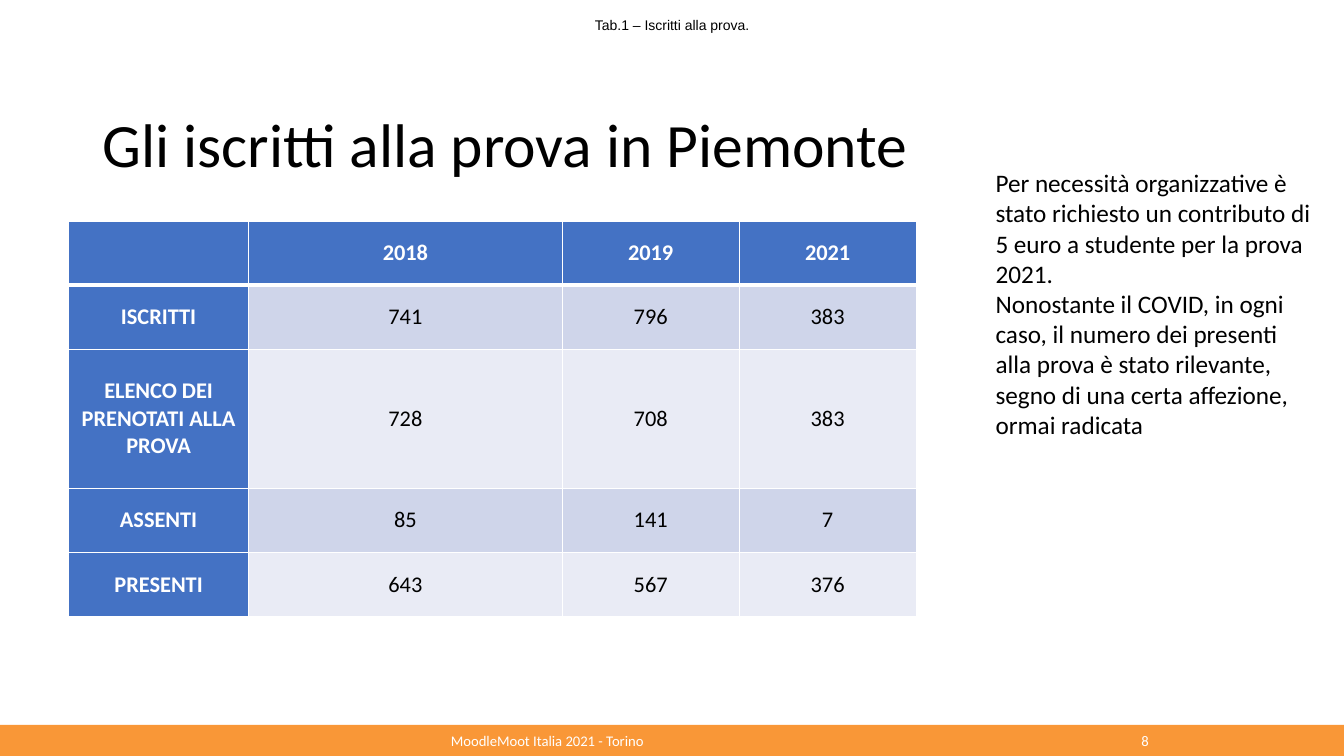
from pptx import Presentation
from pptx import util as u
from pptx.dml.color import RGBColor
from pptx.enum import shapes, text
from pptx.oxml import parse_xml
from pptx.oxml.ns import nsdecls

Pt = u.Pt
BLACK = RGBColor(0x00, 0x00, 0x00)
WHITE = RGBColor(0xFF, 0xFF, 0xFF)
ORANGE = RGBColor(0xF9, 0x97, 0x37)
BLUE = RGBColor(0x44, 0x72, 0xC4)
BANDS = [RGBColor(0xE9, 0xEB, 0xF5), RGBColor(0xCF, 0xD5, 0xEA)]
MID = text.MSO_ANCHOR.MIDDLE
LEFT = text.PP_ALIGN.LEFT
CENTER = text.PP_ALIGN.CENTER


def write(frame, words, size=16, font="Calibri", color=BLACK, bold=False,
          align=LEFT, anchor=MID, space=1.0):
    frame.word_wrap = True
    frame.vertical_anchor = anchor
    frame.text = words
    for para in frame.paragraphs:
        para.alignment = align
        para.line_spacing = space
        para.font.size = Pt(size)
        para.font.name = font
        para.font.bold = bold
        para.font.color.rgb = color


deck = Presentation()
deck.slide_width, deck.slide_height = Pt(960), Pt(540)
slide = deck.slides.add_slide(deck.slide_layouts[5])
items = slide.shapes

bar = items.add_shape(shapes.MSO_SHAPE.RECTANGLE, Pt(0), Pt(517.7), Pt(960), Pt(22.3))
bar.shadow.inherit = False
bar.fill.solid()
bar.fill.fore_color.rgb = ORANGE
bar.line.fill.background()

for words, left, width in [("MoodleMoot Italia 2021 - Torino", 301, 180), ("8", 798, 40)]:
    foot = items.add_textbox(Pt(left), Pt(517.7), Pt(width), Pt(22.3))
    write(foot.text_frame, words, size=10.5, color=WHITE, align=CENTER)

title = items.title
title.left, title.top, title.width, title.height = Pt(66), Pt(53), Pt(828), Pt(104.4)
write(title.text_frame, "Gli iscritti alla prova in Piemonte", size=44, space=0.9)

rows = [
    ["", "2018", "2019", "2021"],
    ["ISCRITTI", "741", "796", "383"],
    ["ELENCO DEI PRENOTATI ALLA PROVA", "728", "708", "383"],
    ["ASSENTI", "85", "141", "7"],
    ["PRESENTI", "643", "567", "376"],
]
table = items.add_table(5, 4, Pt(49), Pt(157.8), Pt(605.4), Pt(283)).table
for col, width in zip(table.columns, [128.6, 224, 126.4, 126.4]):
    col.width = Pt(width)
for row, height in zip(table.rows, [45.8, 45.8, 99.4, 45.8, 45.8]):
    row.height = Pt(height)

for r, row in enumerate(rows):
    for c, words in enumerate(row):
        cell = table.cell(r, c)
        head = r == 0 or c == 0
        cell.margin_left = cell.margin_right = Pt(3.6)
        cell.margin_top = cell.margin_bottom = Pt(0)
        cell.vertical_anchor = MID
        write(cell.text_frame, words, color=WHITE if head else BLACK,
              bold=head, align=CENTER)
        for side in "LRTB":
            thick = (r, side) in [(0, "B"), (1, "T")]
            cell._tc.get_or_add_tcPr().append(parse_xml(
                f'<a:ln{side} {nsdecls("a")} w="{Pt(3 if thick else 1)}">'
                f'<a:solidFill><a:srgbClr val="{WHITE}"/></a:solidFill></a:ln{side}>'))
        cell.fill.solid()
        cell.fill.fore_color.rgb = BLUE if head else BANDS[r % 2]

label = items.add_textbox(Pt(0), Pt(0), Pt(960), Pt(36))
write(label.text_frame, "Tab.1 – Iscritti alla prova.", size=10, font="Arial", align=CENTER)

note = items.add_textbox(Pt(704), Pt(116), Pt(245), Pt(204))
write(note.text_frame,
      "Per necessità organizzative è stato richiesto un contributo di 5 euro "
      "a studente per la prova 2021.\n"
      "Nonostante il COVID, in ogni caso, il numero dei presenti alla prova è "
      "stato rilevante, segno di una certa affezione, ormai radicata",
      size=18, anchor=text.MSO_ANCHOR.TOP)

deck.save("out.pptx")
